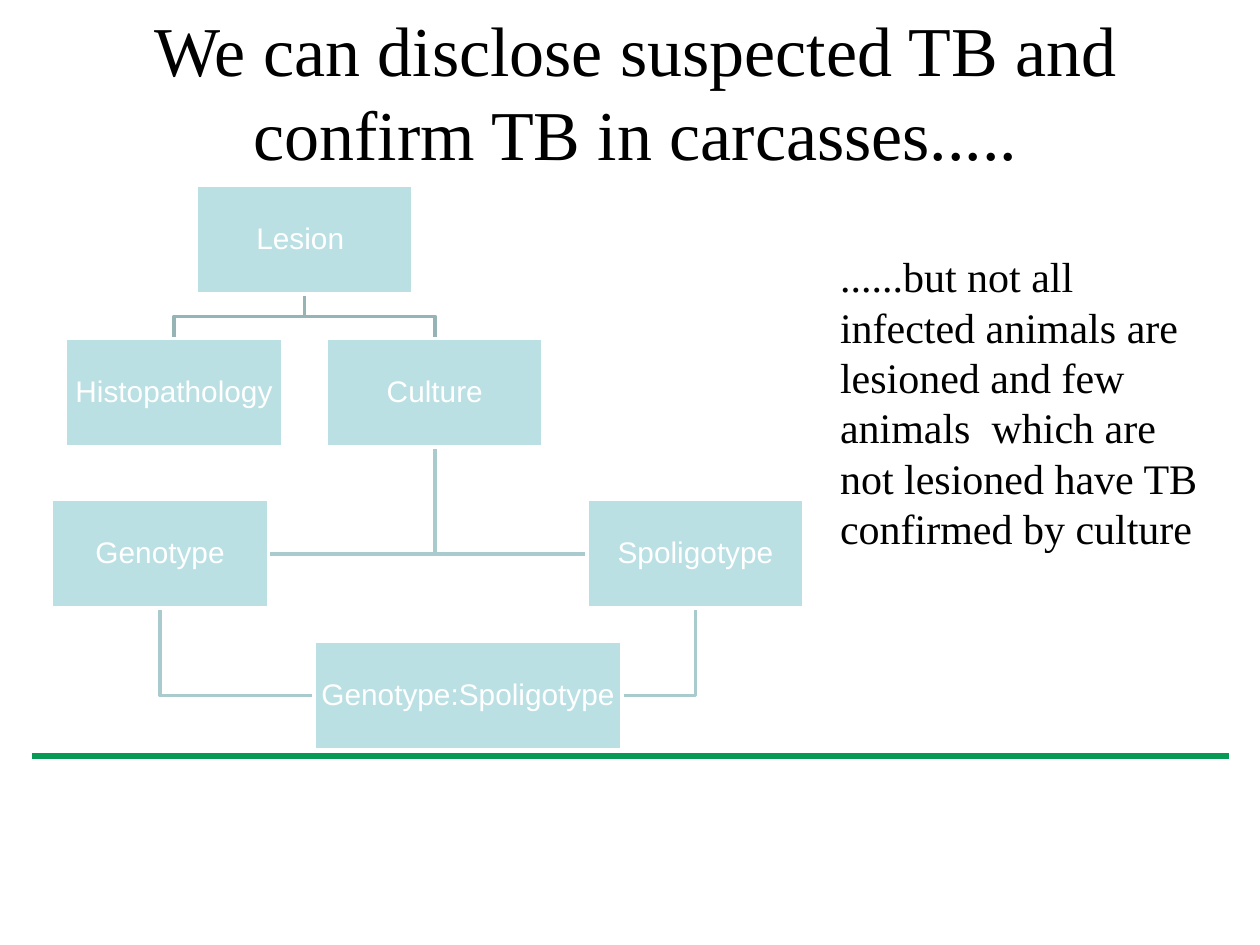
from dataclasses import dataclass

from pptx import Presentation
from pptx.dml.color import RGBColor
from pptx.enum.shapes import MSO_CONNECTOR as Connector, MSO_SHAPE as Shape
from pptx.enum.text import MSO_ANCHOR as Anchor, MSO_AUTO_SIZE as AutoSize, PP_ALIGN as Align
from pptx.oxml.ns import qn
from pptx.util import Pt


def color(hex_value):
    return RGBColor.from_string(hex_value)


@dataclass
class Box:
    left: float
    top: float
    width: float = 124
    height: float = 62

    @property
    def center(self):
        return self.left + self.width / 2

    @property
    def middle(self):
        return self.top + self.height / 2

    @property
    def right(self):
        return self.left + self.width

    @property
    def bottom(self):
        return self.top + self.height


class SlideBuilder:
    serif, sans = "Times New Roman", "Arial"
    black, white, box_fill, green = "000000", "FFFFFF", "BBE0E3", "089A54"
    upper_line, lower_line = "96B3B6", "AACBCE"

    def __init__(self, slide):
        self.slide = slide

    def set_text(self, shape, text, size, font, text_color, align, spacing, frame_format):
        frame = shape.text_frame
        frame_values = {"word_wrap": True, "auto_size": AutoSize.NONE} | frame_format
        for name, value in frame_values.items():
            setattr(frame, name, value)
        paragraph = frame.paragraphs[0]
        paragraph.text = text
        paragraph.alignment = align
        paragraph.line_spacing = spacing
        for name, value in {"size": Pt(size), "name": font}.items():
            setattr(paragraph.font, name, value)
        paragraph.font.color.rgb = color(text_color)

    def prose(self, shape, text, size, align):
        self.set_text(shape, text, size, self.serif, self.black, align,
                      Pt(size * 1.2), {"vertical_anchor": Anchor.TOP})

    def title(self, text, left, top, width, height):
        shape = self.slide.shapes.title
        place = {"left": left, "top": top, "width": width, "height": height}
        for name, value in place.items():
            setattr(shape, name, Pt(value))
        self.prose(shape, text, 40, Align.CENTER)

    def note(self, text, left, top, width, height):
        shape = self.slide.shapes.add_textbox(Pt(left), Pt(top), Pt(width), Pt(height))
        self.prose(shape, text, 24, Align.LEFT)

    def rule(self, left, right, y):
        line = self.slide.shapes.add_connector(
            Connector.STRAIGHT, Pt(left), Pt(y), Pt(right), Pt(y))
        line.line.color.rgb = color(self.green)
        line.line.width = Pt(3)
        properties = line._element.spPr
        properties.append(properties.makeelement(qn("a:effectLst"), {}))

    def branch(self, points, line_color):
        start, *rest = [(Pt(x), Pt(y)) for x, y in points]
        builder = self.slide.shapes.build_freeform(*start)
        builder.add_line_segments(rest, close=False)
        shape = builder.convert_to_shape()
        shape.shadow.inherit = False
        shape.fill.background()
        shape.line.color.rgb = color(line_color)
        shape.line.width = Pt(2)

    def node(self, text, box):
        shape = self.slide.shapes.add_shape(
            Shape.RECTANGLE, Pt(box.left), Pt(box.top), Pt(box.width), Pt(box.height))
        shape.shadow.inherit = False
        shape.fill.solid()
        shape.fill.fore_color.rgb = color(self.box_fill)
        shape.line.color.rgb = color(self.white)
        shape.line.width = Pt(2)
        margins = {f"margin_{side}": Pt(0.7) for side in ("left", "top", "right", "bottom")}
        self.set_text(shape, text, 17, self.sans, self.white, Align.CENTER, 0.9,
                      margins | {"vertical_anchor": Anchor.MIDDLE})


def main():
    presentation = Presentation()
    presentation.slide_width, presentation.slide_height = Pt(720), Pt(540)
    builder = SlideBuilder(presentation.slides.add_slide(presentation.slide_layouts[5]))

    # Title and footer rule
    builder.rule(18, 702, 432)
    builder.title("We can disclose suspected TB and confirm TB in carcasses.....",
                  14.4, 0, 697.6, 104.4)

    # Boxes of the diagnosis chart
    lesion = Box(112, 106)
    histopathology, culture = Box(37.5, 193.5), Box(186.5, 193.5)
    genotype, spoligotype = Box(29.5, 285.5), Box(335.5, 285.5)
    combined = Box(179.5, 366.5, 176)

    # Branches from culture to the typing boxes, and from those to the combined one
    for box, side, combined_side in ((spoligotype, spoligotype.left, combined.right),
                                     (genotype, genotype.right, combined.left)):
        builder.branch([(box.center, box.bottom), (box.center, combined.middle),
                        (combined_side, combined.middle)], builder.lower_line)
        builder.branch([(culture.center, culture.bottom), (culture.center, box.middle),
                        (side, box.middle)], builder.lower_line)

    # Branches from lesion to its two tests
    fork = (lesion.bottom + culture.top) / 2
    for box in (culture, histopathology):
        builder.branch([(lesion.center, lesion.bottom), (lesion.center, fork),
                        (box.center, fork), (box.center, box.top)], builder.upper_line)

    for text, box in (("Lesion ", lesion), ("Histopathology", histopathology),
                      ("Culture", culture), ("Genotype", genotype),
                      ("Spoligotype", spoligotype), ("Genotype:Spoligotype", combined)):
        builder.node(text, box)

    # Side note
    builder.note("......but not all infected animals are lesioned and few animals  "
                 "which are not lesioned have TB confirmed by culture",
                 473, 139.7, 221, 181.4)

    presentation.save("out.pptx")


if __name__ == "__main__":
    main()
